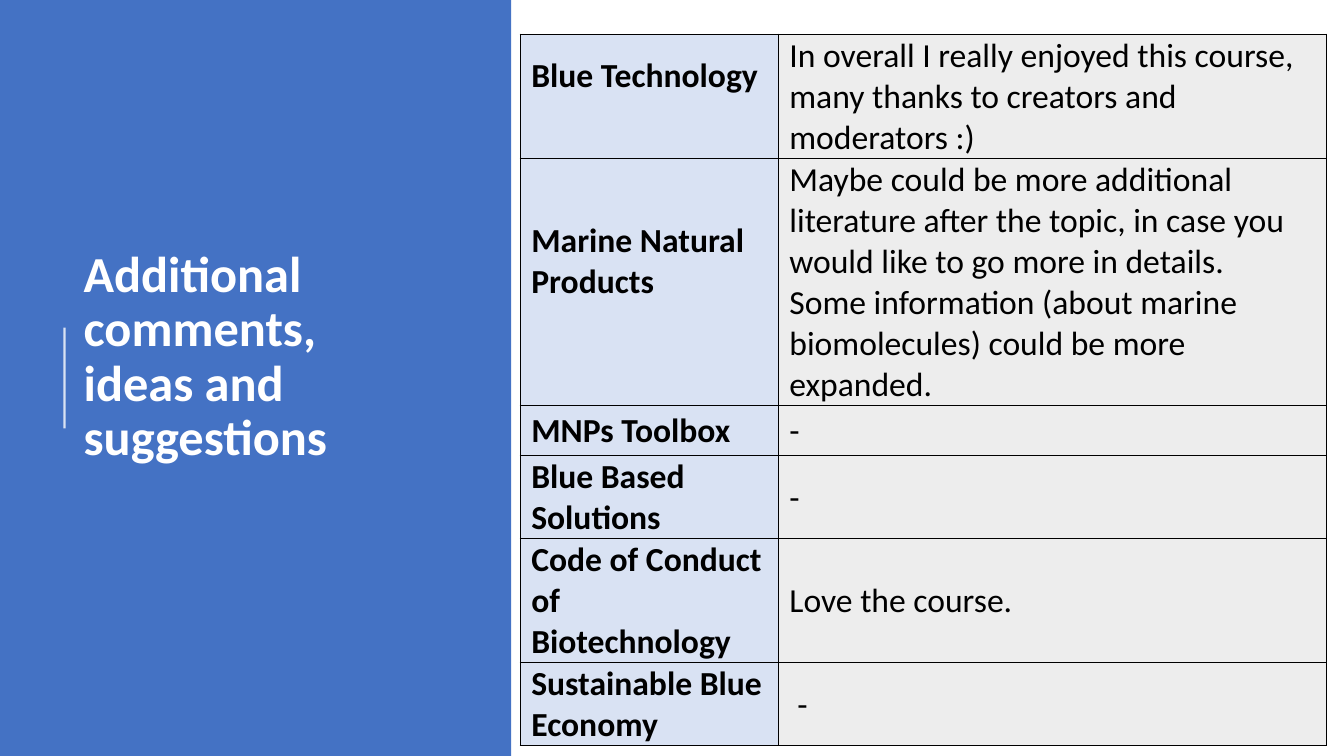
"""Build the slide of additional comments, ideas and suggestions."""
import pptx
import pptx.dml.color
import pptx.enum.shapes
import pptx.enum.text
import pptx.oxml
import pptx.oxml.ns
import pptx.util
from pptx.dml.color import RGBColor
from pptx.util import Inches

TITLE = "Additional comments, ideas and suggestions"
COMMENTS = [
    ("Blue Technology",
     "In overall I really enjoyed this course, many thanks to creators and moderators :)"),
    ("Marine Natural Products",
     "Maybe could be more additional literature after the topic, in case you would like "
     "to go more in details.\n"
     "Some information (about marine biomolecules) could be more expanded."),
    ("MNPs Toolbox", "-"),
    ("Blue Based Solutions", "-"),
    ("Code of Conduct of Biotechnology", "Love the course."),
    ("Sustainable Blue Economy", "-"),
]
COLUMN_WIDTHS = (2.56, 5.44)
ROW_HEIGHTS = (1.04, 1.86, 0.5, 0.8, 0.84, 0.8)
CELL_MARGINS = {"margin_left": 0.11, "margin_top": 0.01,
                "margin_right": 0.11, "margin_bottom": 0}
SPECIAL_MARGINS = {(0, 0): {"margin_bottom": 0.41},
                   (1, 0): {"margin_bottom": 0.41},
                   (5, 1): {"margin_left": 0.19}}

BLUE = RGBColor(0x44, 0x72, 0xC4)
PALE_BLUE = RGBColor(0xD9, 0xE2, 0xF3)
PALE_GREY = RGBColor(0xED, 0xED, 0xED)
WHITE = RGBColor(0xFF, 0xFF, 0xFF)
BLACK = RGBColor(0x00, 0x00, 0x00)

MIDDLE = pptx.enum.text.MSO_ANCHOR.MIDDLE
LEFT = pptx.enum.text.PP_ALIGN.LEFT
TITLE_FORMAT = {"name": "Calibri", "size": pptx.util.Pt(36), "bold": True}
CELL_FORMAT = {"name": "Calibri", "size": pptx.util.Pt(24)}
NAMESPACE = pptx.oxml.ns.nsdecls("a")


def set_attributes(target, values):
    """Set each named attribute of the target."""
    for name, value in values.items():
        setattr(target, name, value)


def format_paragraph(paragraph, values, color):
    """Left-align a paragraph and format its font."""
    paragraph.alignment = LEFT
    set_attributes(paragraph.font, values)
    paragraph.font.color.rgb = color


def add_borders(cell):
    """Give a cell thin black borders on all sides."""
    properties = cell._tc.get_or_add_tcPr()
    for index, side in enumerate(("lnL", "lnR", "lnT", "lnB")):
        properties.insert(index, pptx.oxml.parse_xml(
            f'<a:{side} {NAMESPACE} w="12700"><a:solidFill><a:srgbClr val="{BLACK}"/>'
            f'</a:solidFill><a:prstDash val="solid"/></a:{side}>'))


def add_title(slide):
    """Place the title over the blue panel."""
    title = slide.shapes.title
    set_attributes(title, {"left": Inches(0.73), "top": Inches(0.54),
                           "width": Inches(3.39), "height": Inches(6.02)})
    frame = title.text_frame
    set_attributes(frame, {"text": TITLE, "word_wrap": True, "vertical_anchor": MIDDLE,
                           "auto_size": pptx.enum.text.MSO_AUTO_SIZE.NONE})
    paragraph = frame.paragraphs[0]
    paragraph.line_spacing = 0.9
    format_paragraph(paragraph, TITLE_FORMAT, WHITE)

    panel = slide.shapes.add_shape(pptx.enum.shapes.MSO_SHAPE.RECTANGLE,
                                   0, 0, Inches(5.07), Inches(7.5))
    panel.shadow.inherit = False
    panel.fill.solid()
    panel.fill.fore_color.rgb = BLUE
    panel.line.fill.background()
    title._element.addprevious(panel._element)


def add_accent_line(slide):
    """Draw the translucent line beside the title."""
    accent = slide.shapes.add_connector(
        pptx.enum.shapes.MSO_CONNECTOR.STRAIGHT,
        Inches(0.64), Inches(4.25), Inches(0.64), Inches(3.25))
    accent.line.color.rgb = WHITE
    accent.line.width = pptx.util.Pt(1.5)
    color = accent._element.spPr.find(".//" + pptx.oxml.ns.qn("a:srgbClr"))
    color.append(pptx.oxml.parse_xml(f'<a:alpha {NAMESPACE} val="80000"/>'))
    accent._element.spPr.append(pptx.oxml.parse_xml(f"<a:effectLst {NAMESPACE}/>"))


def add_comment_table(slide):
    """Add the table of modules and comments."""
    table = slide.shapes.add_table(
        len(COMMENTS), len(COLUMN_WIDTHS), Inches(5.16), Inches(0.34),
        Inches(sum(COLUMN_WIDTHS)), Inches(sum(ROW_HEIGHTS))).table
    set_attributes(table, {"first_row": False, "horz_banding": False})
    for column, width in zip(table.columns, COLUMN_WIDTHS):
        column.width = Inches(width)
    for row, height in zip(table.rows, ROW_HEIGHTS):
        row.height = Inches(height)
    for row_index, texts in enumerate(COMMENTS):
        for column_index, text in enumerate(texts):
            cell = table.cell(row_index, column_index)
            is_label = column_index == 0
            margins = CELL_MARGINS | SPECIAL_MARGINS.get((row_index, column_index), {})
            set_attributes(cell, {name: Inches(size) for name, size in margins.items()})
            set_attributes(cell, {"text": text, "vertical_anchor": MIDDLE})
            cell.fill.solid()
            cell.fill.fore_color.rgb = PALE_BLUE if is_label else PALE_GREY
            add_borders(cell)
            for paragraph in cell.text_frame.paragraphs:
                format_paragraph(paragraph, CELL_FORMAT | {"bold": is_label}, BLACK)


def main():
    """Build and save the presentation."""
    presentation = pptx.Presentation()
    presentation.slide_width = Inches(13.33)
    presentation.slide_height = Inches(7.5)
    slide = presentation.slides.add_slide(presentation.slide_layouts[5])
    add_title(slide)
    add_accent_line(slide)
    add_comment_table(slide)
    presentation.save("out.pptx")


if __name__ == "__main__":
    main()
